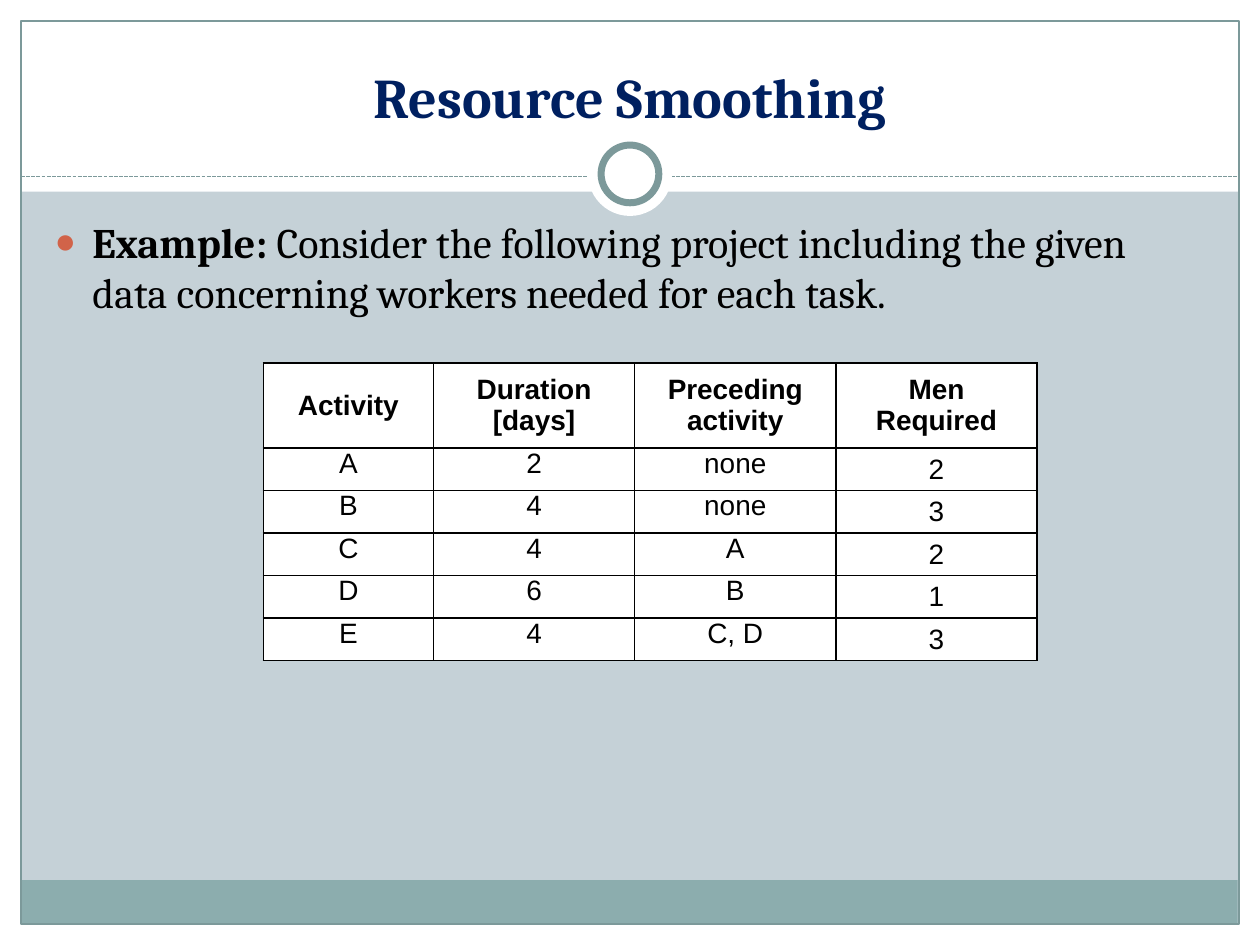
"""Build the Resource Smoothing slide with its project data table."""
from dataclasses import dataclass
from typing import Optional

from lxml.etree import SubElement
from pptx import Presentation
from pptx.dml.color import RGBColor
from pptx.enum.dml import MSO_LINE_DASH_STYLE as Dash
from pptx.enum.shapes import MSO_CONNECTOR as Connector
from pptx.enum.shapes import MSO_SHAPE as Preset
from pptx.enum.text import MSO_ANCHOR as Anchor
from pptx.enum.text import MSO_AUTO_SIZE as AutoSize
from pptx.enum.text import PP_ALIGN as Align
from pptx.oxml import parse_xml
from pptx.oxml.ns import nsdecls, qn
from pptx.util import Pt


@dataclass(frozen=True)
class Theme:
    """Colours, fonts and type sizes of the slide."""
    background: str = "C5D1D7"
    white: str = "FFFFFF"
    black: str = "000000"
    band: str = "8CADAE"
    rule: str = "7C999A"
    navy: str = "002060"
    bullet: str = "D16349"
    text_font: str = "Cambria"
    table_font: str = "Arial"
    title_size: float = 32
    body_size: float = 24
    table_size: float = 16


@dataclass(frozen=True)
class Decor:
    """A plain shape of the frame, with lengths in points."""
    preset: Preset
    left: float
    top: float
    width: float
    height: float
    fill: Optional[str] = None
    line: Optional[str] = None
    weight: float = 0.75


THEME = Theme()
WIDTH, HEIGHT, MARGIN = 720, 540, 12
RULE_TOP = 100.8
DECOR = [
    Decor(Preset.RECTANGLE, 0, HEIGHT - MARGIN, WIDTH, MARGIN, THEME.white),
    Decor(Preset.RECTANGLE, 0, 0, WIDTH, 109.6, THEME.white),
    Decor(Preset.RECTANGLE, 0, 0, MARGIN, HEIGHT, THEME.white),
    Decor(Preset.RECTANGLE, WIDTH - MARGIN, 0, MARGIN, HEIGHT, THEME.white),
    Decor(Preset.RECTANGLE, 11.75, 503, 695.5, 24.5, THEME.band),
    Decor(Preset.RECTANGLE, MARGIN, MARGIN, WIDTH - 2 * MARGIN,
          HEIGHT - 2 * MARGIN, line=THEME.rule),
]
RINGS = [
    Decor(Preset.OVAL, 336, 75.4, 48, 48, THEME.white),
    Decor(Preset.OVAL, 343.5, 82.9, 33, 33, THEME.white, THEME.rule, 4),
]
COLUMNS = [97.2, 115, 115, 115]
HEADER_HEIGHT, ROW_HEIGHT = 48.6, 24.3
ROWS = [
    ["Activity", "Duration [days]", "Preceding activity", "Men\nRequired"],
    ["A", "2", "none", "2"],
    ["B", "4", "none", "3"],
    ["C", "4", "A", "2"],
    ["D", "6", "B", "1"],
    ["E", "4", "C, D", "3"],
]


def add_decor(page, decor: Decor) -> None:
    """Draw one frame shape."""
    shape = page.shapes.add_shape(decor.preset, Pt(decor.left), Pt(decor.top),
                                  Pt(decor.width), Pt(decor.height))
    shape.shadow.inherit = False
    if decor.fill:
        shape.fill.solid()
        shape.fill.fore_color.rgb = RGBColor.from_string(decor.fill)
    else:
        shape.fill.background()
    if decor.line:
        shape.line.color.rgb = RGBColor.from_string(decor.line)
        shape.line.width = Pt(decor.weight)
    else:
        shape.line.fill.background()


def add_rule(page) -> None:
    """Draw the dashed rule below the title."""
    rule = page.shapes.add_connector(Connector.STRAIGHT, Pt(MARGIN), Pt(RULE_TOP),
                                     Pt(WIDTH - MARGIN), Pt(RULE_TOP))
    rule.line.color.rgb = RGBColor.from_string(THEME.rule)
    rule.line.width = Pt(0.75)
    rule.line.dash_style = Dash.SQUARE_DOT
    SubElement(rule.element.spPr, qn("a:effectLst"))


def add_span(para, text: str, font: str, size: float, color: str, bold: bool) -> None:
    """Add one formatted run to a paragraph."""
    span = para.add_run()
    span.text = text
    span.font.name = font
    span.font.size = Pt(size)
    span.font.bold = bold
    span.font.color.rgb = RGBColor.from_string(color)


def place(box, left: float, top: float, width: float, height: float) -> None:
    """Move a placeholder in front of the frame and set its position."""
    box.element.getparent().append(box.element)
    box.left, box.top, box.width, box.height = map(Pt, (left, top, width, height))
    box.text_frame.word_wrap = True
    box.text_frame.auto_size = AutoSize.NONE


def set_bullet(para) -> None:
    """Give a paragraph the round coloured bullet and hanging indent."""
    props = para._p.get_or_add_pPr()
    props.set("marL", str(Pt(21.6)))
    props.set("indent", str(Pt(-21.6)))
    for xml in (f'<a:buClr {nsdecls("a")}><a:srgbClr val="{THEME.bullet}"/></a:buClr>',
                f'<a:buSzPct {nsdecls("a")} val="85000"/>',
                f'<a:buFont {nsdecls("a")} typeface="{THEME.table_font}"/>',
                f'<a:buChar {nsdecls("a")} char="●"/>'):
        props.append(parse_xml(xml))


def set_borders(cell) -> None:
    """Put a thin black line on each side of a cell."""
    props = cell._tc.get_or_add_tcPr()
    for index, side in enumerate(("lnL", "lnR", "lnT", "lnB")):
        props.insert(index, parse_xml(
            f'<a:{side} {nsdecls("a")} w="{Pt(1)}"><a:solidFill>'
            f'<a:srgbClr val="{THEME.black}"/></a:solidFill></a:{side}>'))


def fill_cell(cell, text: str, bold: bool, anchor: Anchor) -> None:
    """Write and format one table cell."""
    cell.fill.solid()
    cell.fill.fore_color.rgb = RGBColor.from_string(THEME.white)
    cell.margin_left = cell.margin_right = Pt(3.6)
    cell.margin_top = cell.margin_bottom = Pt(0)
    cell.vertical_anchor = anchor
    frame = cell.text_frame
    for index, line in enumerate(text.split("\n")):
        para = frame.add_paragraph() if index else frame.paragraphs[0]
        para.alignment = Align.CENTER
        add_span(para, line, THEME.table_font, THEME.table_size, THEME.black, bold)
    set_borders(cell)


def add_project_table(page) -> None:
    """Add the table of activities."""
    height = HEADER_HEIGHT + ROW_HEIGHT * (len(ROWS) - 1)
    table = page.shapes.add_table(len(ROWS), len(COLUMNS), Pt(150.5), Pt(207.5),
                                  Pt(sum(COLUMNS)), Pt(height)).table
    for column, width in zip(table.columns, COLUMNS):
        column.width = Pt(width)
    for r, texts in enumerate(ROWS):
        header = r == 0
        table.rows[r].height = Pt(HEADER_HEIGHT if header else ROW_HEIGHT)
        for c, text in enumerate(texts):
            middle = header or c == len(COLUMNS) - 1
            fill_cell(table.cell(r, c), text, header,
                      Anchor.MIDDLE if middle else Anchor.TOP)


def main() -> None:
    """Build and save the deck."""
    deck = Presentation()
    deck.slide_width, deck.slide_height = Pt(WIDTH), Pt(HEIGHT)
    page = deck.slides.add_slide(deck.slide_layouts[1])
    page.background.fill.solid()
    page.background.fill.fore_color.rgb = RGBColor.from_string(THEME.background)
    title, body = page.shapes.title, page.placeholders[1]
    for decor in DECOR:
        add_decor(page, decor)
    add_rule(page)
    for ring in RINGS:
        add_decor(page, ring)

    place(title, 24, 18, 672, 60)
    title.text_frame.vertical_anchor = Anchor.BOTTOM
    para = title.text_frame.paragraphs[0]
    para.alignment = Align.CENTER
    add_span(para, "Resource Smoothing", THEME.text_font, THEME.title_size, THEME.navy, True)

    place(body, 24, 120, 674, 360)
    para = body.text_frame.paragraphs[0]
    set_bullet(para)
    for text, bold in (("Example: ", True),
                       ("Consider the following project including the given data "
                        "concerning workers needed for each task.", False)):
        add_span(para, text, THEME.text_font, THEME.body_size, THEME.black, bold)
    add_project_table(page)
    deck.save("out.pptx")


if __name__ == "__main__":
    main()
